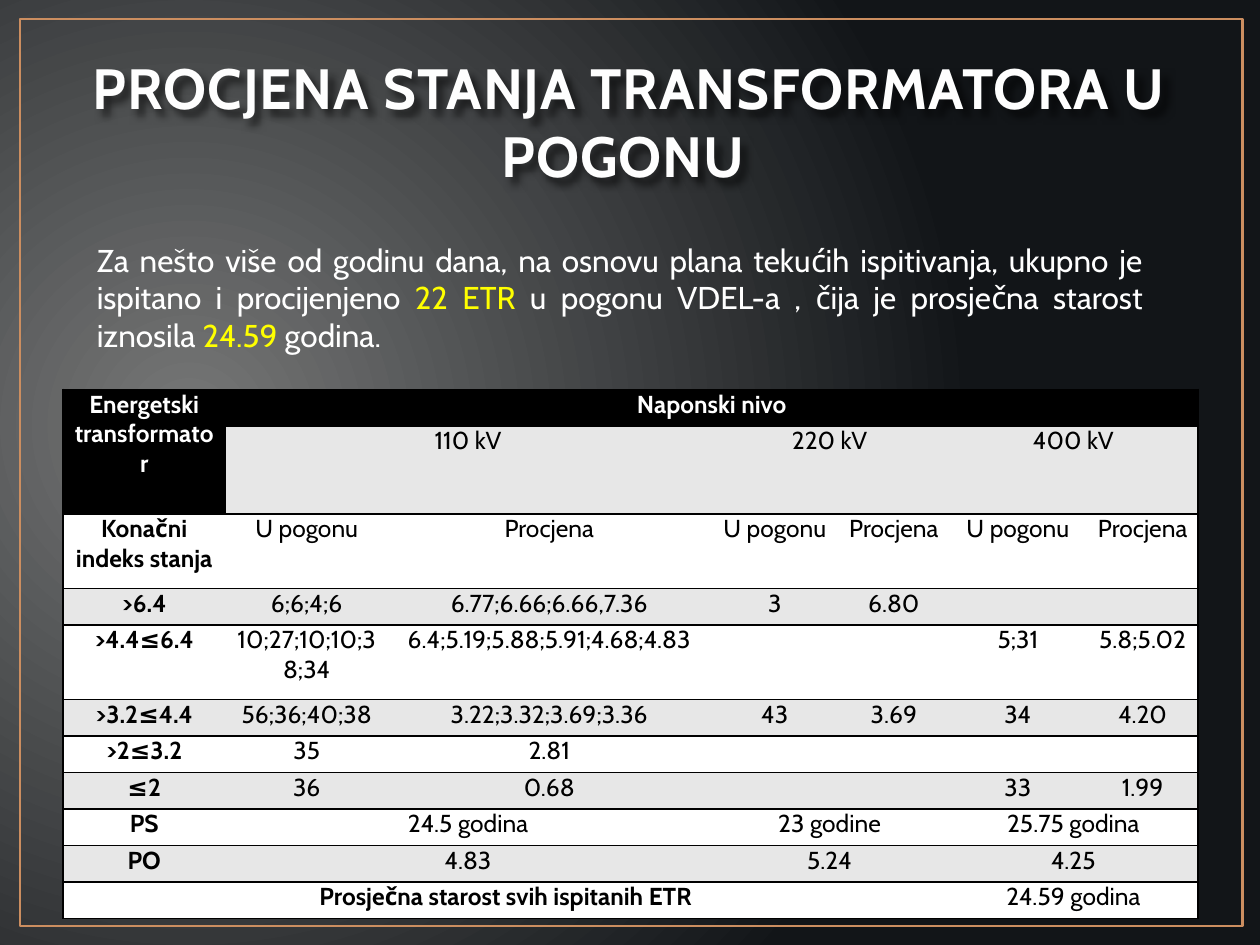
"""Build the slide on the condition of transformers in service."""
from dataclasses import dataclass

from lxml.etree import SubElement
from pptx import Presentation
from pptx.dml.color import RGBColor as Color
from pptx.enum.shapes import MSO_SHAPE as Shape
from pptx.enum.text import MSO_ANCHOR as Anchor, PP_ALIGN as Align
from pptx.oxml import parse_xml
from pptx.oxml.ns import nsdecls, qn
from pptx.util import Inches, Pt


@dataclass(frozen=True)
class Theme:
    font: str = "Cabin"
    title_size: float = 32.4
    body_size: float = 18
    table_size: float = 14
    glow: str = "767777"
    night: str = "121518"
    frame: str = "CC8E60"
    title: str = "FEFEFE"
    title_outline: str = "3A4C5B"
    white: str = "FFFFFF"
    black: str = "000000"
    band: str = "E7E7E7"
    accent: str = "FFFF00"


class SlideBuilder:
    def __init__(self, slide, theme):
        self.slide = slide
        self.theme = theme

    def style_run(self, run, size, color, bold=False):
        run.font.name = self.theme.font
        run.font.size = Pt(size)
        run.font.bold = bold
        run.font.color.rgb = Color.from_string(color)

    def background(self):
        fill = self.slide.background.fill
        fill.gradient()
        for stop, color in zip(fill.gradient_stops, (self.theme.glow, self.theme.night)):
            stop.color.rgb = Color.from_string(color)
        gradient = self.slide.background._cSld.find(".//" + qn("a:gradFill"))
        gradient.replace(gradient.find(qn("a:lin")), parse_xml(
            f'<a:path {nsdecls("a")} path="circle">'
            '<a:fillToRect l="15000" t="50000" r="85000" b="60000"/></a:path>'))

    def frame(self, left, top, width, height):
        shape = self.slide.shapes.add_shape(
            Shape.RECTANGLE, Inches(left), Inches(top), Inches(width), Inches(height))
        shape.shadow.inherit = False
        shape.fill.background()
        shape.line.color.rgb = Color.from_string(self.theme.frame)
        shape.line.width = Pt(1.5)

    def text_box(self, left, top, width, height, align):
        shape = self.slide.shapes.add_textbox(
            Inches(left), Inches(top), Inches(width), Inches(height))
        shape.text_frame.word_wrap = True
        paragraph = shape.text_frame.paragraphs[0]
        paragraph.alignment = align
        return shape, paragraph

    def title(self, text, left, top, width, height):
        shape, paragraph = self.text_box(left, top, width, height, Align.CENTER)
        shape.text_frame.vertical_anchor = Anchor.BOTTOM
        paragraph.text = text
        run = paragraph.runs[0]
        self.style_run(run, self.theme.title_size, self.theme.title, True)
        properties = run.font._element
        properties.set("spc", "50")
        properties.insert(0, parse_xml(
            f'<a:ln {nsdecls("a")} w="13335"><a:solidFill>'
            f'<a:srgbClr val="{self.theme.title_outline}"/></a:solidFill></a:ln>'))
        shape._element.spPr.append(parse_xml(
            f'<a:effectLst {nsdecls("a")}><a:outerShdw blurRad="63500" dist="50800" '
            f'dir="3000000"><a:srgbClr val="{self.theme.black}"><a:alpha val="60000"/>'
            '</a:srgbClr></a:outerShdw></a:effectLst>'))

    def body(self, pieces, left, top, width, height):
        _, paragraph = self.text_box(left, top, width, height, Align.JUSTIFY)
        for text, color in pieces:
            run = paragraph.add_run()
            run.text = text
            self.style_run(run, self.theme.body_size, color)

    def borders(self, cell, visible_sides):
        properties = cell._tc.get_or_add_tcPr()
        for side in "LRTB":
            line = SubElement(properties, qn(f"a:ln{side}"), w=str(Pt(1)))
            if side in visible_sides:
                fill = SubElement(line, qn("a:solidFill"))
                SubElement(fill, qn("a:srgbClr"), val=self.theme.black)
            else:
                SubElement(line, qn("a:noFill"))

    def cell(self, cell, text, fill, color, bold):
        cell.margin_left = cell.margin_right = Inches(0.07)
        cell.margin_top = cell.margin_bottom = 0
        cell.fill.solid()
        cell.fill.fore_color.rgb = Color.from_string(fill)
        paragraph = cell.text_frame.paragraphs[0]
        paragraph.alignment = Align.CENTER
        paragraph.font.size = Pt(self.theme.table_size)
        if text:
            paragraph.text = text
            self.style_run(paragraph.runs[0], self.theme.table_size, color, bold)

    def table(self, rows, left, top, widths, heights):
        theme = self.theme
        table = self.slide.shapes.add_table(
            len(rows), len(widths), Inches(left), Inches(top),
            Inches(sum(widths)), Inches(sum(heights))).table
        table.first_row = table.horz_banding = False
        for column, width in zip(table.columns, widths):
            column.width = Inches(width)
        for row, height in zip(table.rows, heights):
            row.height = Inches(height)
        last = len(widths) - 1
        for r, texts in enumerate(rows):
            for c, text in enumerate(texts):
                header = r == 0 or (r, c) == (1, 0)
                fill = theme.black if header else theme.band if r % 2 else theme.white
                color = theme.white if header else theme.black
                reaches_edge = all(other is None for other in texts[c + 1:])
                cell = table.cell(r, c)
                self.borders(cell, "TB" + "L" * (c == 0) + "R" * reaches_edge)
                self.cell(cell, text, fill, color, header or c == 0)
            for start in range(len(widths)):
                end = start
                while end < last and texts[end + 1] is None:
                    end += 1
                if texts[start] is not None and end > start:
                    table.cell(r, start).merge(table.cell(r, end))
        table.cell(0, 0).merge(table.cell(1, 0))


def main():
    theme = Theme()
    presentation = Presentation()
    presentation.slide_width, presentation.slide_height = Inches(10), Inches(7.5)
    slide = presentation.slides.add_slide(presentation.slide_layouts[6])
    builder = SlideBuilder(slide, theme)

    builder.background()
    builder.frame(0.16, 0.15, 9.7, 7.2)
    builder.title("PROCJENA STANJA TRANSFORMATORA U POGONU ", 0.5, 0.3, 9, 1.25)

    rows = [
        ["Energetski transformator", "Naponski nivo", None, None, None, None, None],
        [None, "110 kV", None, "220 kV", None, "400 kV", None],
        ["Konačni indeks stanja"] + ["U pogonu", "Procjena"] * 3,
        [">6.4", "6;6;4;6", "6.77;6.66;6.66,7.36", "3", "6.80", "", ""],
        [">4.4≤6.4", "10;27;10;10;38;34", "6.4;5.19;5.88;5.91;4.68;4.83",
         "", "", "5;31", "5.8;5.02"],
        [">3.2≤4.4", "56;36;40;38", "3.22;3.32;3.69;3.36", "43", "3.69", "34", "4.20"],
        [">2≤3.2", "35", "2.81", "", "", "", ""],
        ["≤2", "36", "0.68", "", "", "33", "1.99"],
        ["PS", "24.5 godina", None, "23 godine", None, "25.75 godina", None],
        ["PO", "4.83", None, "5.24", None, "4.25", None],
        ["Prosječna starost svih ispitanih ETR", None, None, None, None,
         "24.59 godina", None],
    ]
    heights = [0.59 if r in (2, 4) else 0.29 for r in range(len(rows))]
    builder.table(rows, 0.5, 3.09, [1.29, 1.29, 2.56, 1.02, 0.87, 1.1, 0.88], heights)

    builder.body([
        ("Za nešto više od godinu dana, na osnovu plana tekućih ispitivanja, "
         "ukupno je ispitano i procijenjeno ", theme.white),
        ("22 ETR ", theme.accent),
        ("u pogonu VDEL-a , čija je prosječna starost iznosila ", theme.white),
        ("24.59 ", theme.accent),
        ("godina.", theme.white),
    ], 0.67, 1.86, 8.5, 1.01)
    presentation.save("out.pptx")


if __name__ == "__main__":
    main()
